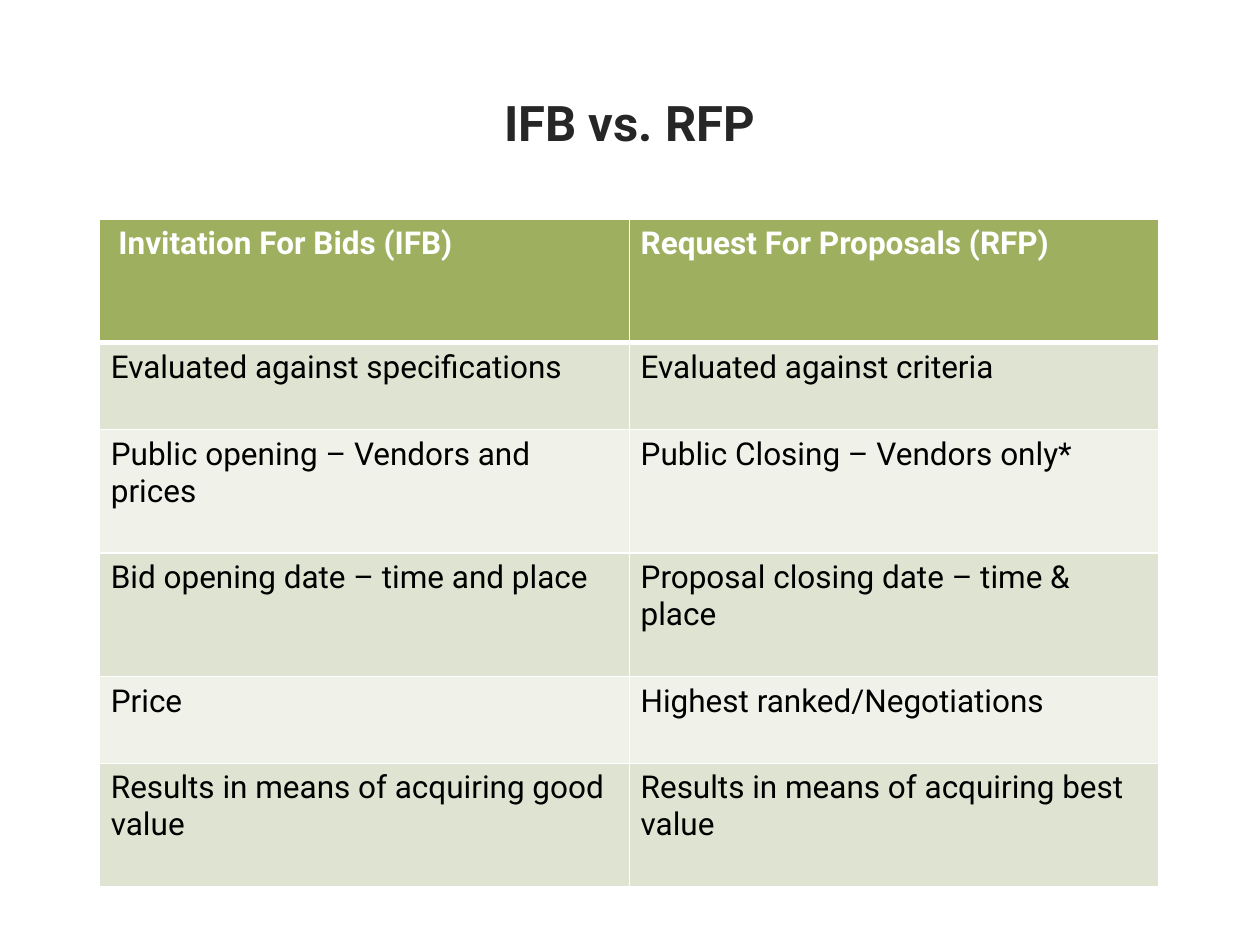
from dataclasses import dataclass

from lxml import etree
from pptx import Presentation
from pptx.dml.color import RGBColor
from pptx.enum.text import MSO_ANCHOR, PP_ALIGN
from pptx.oxml.ns import qn
from pptx.util import Inches, Pt

MIDDLE = MSO_ANCHOR.MIDDLE
CENTER = PP_ALIGN.CENTER


@dataclass(frozen=True)
class Theme:
    font: str = "Roboto"
    title_size: int = 28
    body_size: int = 18
    title: str = "262626"
    header_text: str = "FFFFFF"
    body_text: str = "000000"
    header_fill: str = "9EB060"
    bands: tuple = ("DFE4D2", "F0F2EA")
    border: str = "FFFFFF"
    thin: int = 1
    thick: int = 3


THEME = Theme()
LEFT, WIDTH = 0.79, 8.41

COMPARISON = [
    ("Invitation For Bids (IFB)", "Request For Proposals (RFP)"),
    ("Evaluated against specifications", "Evaluated against criteria"),
    ("Public opening – Vendors and prices", "Public Closing – Vendors only*"),
    ("Bid opening date – time and place", "Proposal closing date – time & place"),
    ("Price", "Highest ranked/Negotiations"),
    ("Results in means of acquiring good value",
     "Results in means of acquiring best value"),
]
SHORT, TALL = 0.69, 0.98
ROW_HEIGHTS = [TALL, SHORT, TALL, TALL, SHORT, TALL]


def style_paragraph(paragraph, size, color, bold):
    font = paragraph.font
    font.name = THEME.font
    font.size = Pt(size)
    font.bold = bold
    font.color.rgb = RGBColor.from_string(color)


def add_title(slide, text):
    title = slide.shapes.add_textbox(
        Inches(LEFT), Inches(0.34), Inches(WIDTH), Inches(1.25))
    frame = title.text_frame
    frame.word_wrap = True
    frame.vertical_anchor = MIDDLE
    frame.text = text
    heading = frame.paragraphs[0]
    heading.alignment = CENTER
    style_paragraph(heading, THEME.title_size, THEME.title, True)


def set_borders(cell, top, bottom):
    properties = cell._tc.get_or_add_tcPr()
    widths = {"a:lnL": THEME.thin, "a:lnR": THEME.thin,
              "a:lnT": top, "a:lnB": bottom}
    for tag, width in widths.items():
        line = etree.SubElement(properties, qn(tag), w=str(Pt(width)))
        fill = etree.SubElement(line, qn("a:solidFill"))
        etree.SubElement(fill, qn("a:srgbClr"), val=THEME.border)


def fill_cell(cell, text, row):
    is_header = row == 0
    # The header is set off from the body by a thicker rule
    set_borders(cell,
                top=THEME.thick if row == 1 else THEME.thin,
                bottom=THEME.thick if is_header else THEME.thin)
    background = THEME.header_fill if is_header else THEME.bands[(row - 1) % 2]
    cell.fill.solid()
    cell.fill.fore_color.rgb = RGBColor.from_string(background)
    cell.margin_left = cell.margin_right = Inches(0.09)
    cell.margin_top = cell.margin_bottom = Inches(0.05)
    cell.text = text
    color = THEME.header_text if is_header else THEME.body_text
    style_paragraph(cell.text_frame.paragraphs[0], THEME.body_size,
                    color, is_header)


def add_comparison(slide, rows):
    columns = len(rows[0])
    table = slide.shapes.add_table(
        len(rows), columns, Inches(LEFT), Inches(1.74),
        Inches(WIDTH), Inches(sum(ROW_HEIGHTS))).table
    for column in table.columns:
        column.width = Inches(WIDTH / columns)
    for row, (texts, height) in enumerate(zip(rows, ROW_HEIGHTS)):
        table.rows[row].height = Inches(height)
        for column, text in enumerate(texts):
            fill_cell(table.cell(row, column), text, row)
    # The first heading is slightly indented
    table.cell(0, 0).margin_left = Inches(0.15)


def main():
    presentation = Presentation()
    presentation.slide_width = Inches(10)
    presentation.slide_height = Inches(7.5)
    slide = presentation.slides.add_slide(presentation.slide_layouts[6])
    add_title(slide, "IFB vs. RFP")
    add_comparison(slide, COMPARISON)
    presentation.save("out.pptx")


if __name__ == "__main__":
    main()
